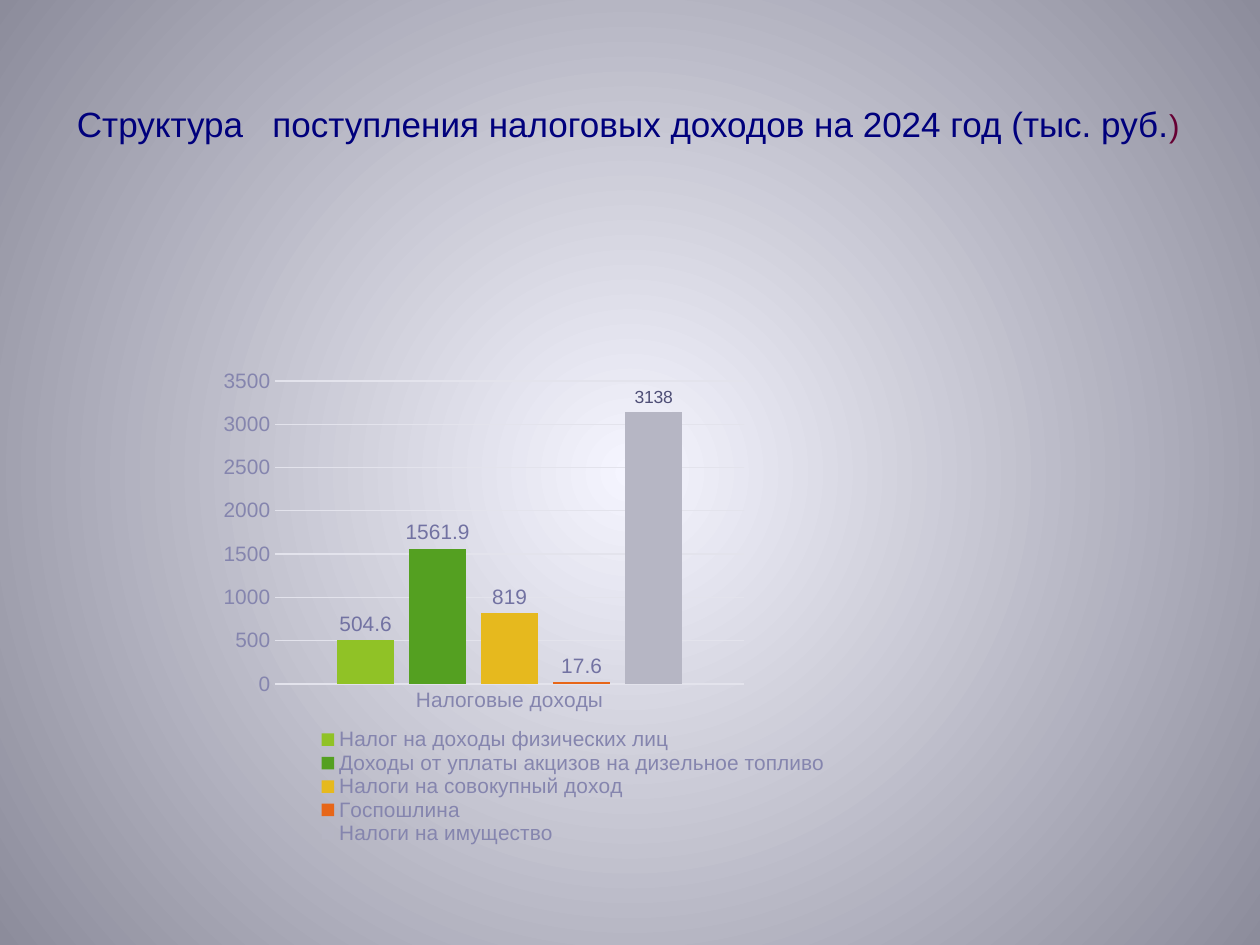
from lxml.etree import SubElement
from pptx import Presentation
from pptx.chart.data import CategoryChartData
from pptx.dml.color import RGBColor
from pptx.enum.chart import (
    XL_CHART_TYPE as ChartType,
    XL_LABEL_POSITION as LabelPosition,
    XL_LEGEND_POSITION as LegendPosition,
    XL_TICK_MARK as TickMark,
)
from pptx.enum.text import MSO_ANCHOR as Anchor, PP_ALIGN as Align
from pptx.oxml.ns import qn
from pptx.util import Cm, Pt

FONT = "Arial"
COLORS = {
    "center": "F5F5FF",
    "edge": "8C8C9B",
    "title": "00007C",
    "bracket": "660033",
    "axis_text": "8585AE",
    "label": "7272A2",
    "dark_label": "4F4F77",
    "grid": "E3E3EC",
}
CATEGORY = "Налоговые доходы"
# name, value, bar colour, label size, label colour
TAXES = [
    ("Налог на доходы физических лиц", 504.6, "90C226", 11.9, "label"),
    ("Доходы от уплаты акцизов на дизельное топливо", 1561.9, "54A021", 11.9, "label"),
    ("Налоги на совокупный доход", 819, "E6B91E", 11.9, "label"),
    ("Госпошлина", 17.6, "E76618", 11.9, "label"),
    ("Налоги на имущество", 3138, "B6B6C4", 10, "dark_label"),
]


class SlideBuilder:
    def __init__(self, presentation):
        self.slide = presentation.slides.add_slide(presentation.slide_layouts[5])

    def style_font(self, font, size, color):
        font.name = FONT
        font.size = Pt(size)
        font.color.rgb = RGBColor.from_string(COLORS[color])

    def style_line(self, line):
        line.color.rgb = RGBColor.from_string(COLORS["grid"])
        line.width = Pt(0.75)

    def radial_background(self):
        fill = self.slide.background.fill
        fill.gradient()
        for stop, name in zip(fill.gradient_stops, ("center", "edge")):
            stop.color.rgb = RGBColor.from_string(COLORS[name])
        gradient = self.slide.element.find(".//" + qn("a:gradFill"))
        gradient.remove(gradient.find(qn("a:lin")))
        circle = SubElement(gradient, qn("a:path"), {"path": "circle"})
        SubElement(circle, qn("a:fillToRect"), dict.fromkeys("ltrb", "50000"))

    def title(self, parts, left, top, width, height):
        shape = self.slide.shapes.title
        shape.left, shape.top, shape.width, shape.height = left, top, width, height
        text_frame = shape.text_frame
        text_frame.vertical_anchor = Anchor.MIDDLE
        paragraph = text_frame.paragraphs[0]
        paragraph.alignment = Align.CENTER
        for text, size, color in parts:
            run = paragraph.add_run()
            run.text = text
            self.style_font(run.font, size, color)

    def set_layout(self, parent, index, inner, **place):
        """Place a chart part by fractions of the chart area."""
        for old in parent.findall(qn("c:layout")):
            parent.remove(old)
        layout = SubElement(parent, qn("c:layout"))
        parent.insert(index, layout)
        manual = SubElement(layout, qn("c:manualLayout"))
        if inner:
            SubElement(manual, qn("c:layoutTarget"), val="inner")
        for mode in ("xMode", "yMode"):
            SubElement(manual, qn("c:" + mode), val="edge")
        for name, value in place.items():
            SubElement(manual, qn("c:" + name), val=str(value))

    def column_chart(self, left, top, width, height):
        data = CategoryChartData()
        data.categories = [CATEGORY]
        for name, value, *_ in TAXES:
            data.add_series(name, [value])
        chart = self.slide.shapes.add_chart(
            ChartType.COLUMN_CLUSTERED, left, top, width, height, data
        ).chart
        chart.has_title = False
        self.style_font(chart.font, 10, "dark_label")

        # Axes
        for axis in (chart.category_axis, chart.value_axis):
            axis.major_tick_mark = axis.minor_tick_mark = TickMark.NONE
            self.style_font(axis.tick_labels.font, 11.9, "axis_text")
        self.style_line(chart.category_axis.format.line)
        value_axis = chart.value_axis
        value_axis.minimum_scale, value_axis.maximum_scale = 0, 3500
        value_axis.major_unit = 500
        value_axis.format.line.fill.background()
        self.style_line(value_axis.major_gridlines.format.line)

        # Columns and their labels
        plot = chart.plots[0]
        plot.gap_width, plot.overlap, plot.vary_by_categories = 219, -27, False
        for series, (_, _, fill, size, color) in zip(plot.series, TAXES):
            series.format.fill.solid()
            series.format.fill.fore_color.rgb = RGBColor.from_string(fill)
            labels = series.data_labels
            labels.show_value = True
            labels.position = LabelPosition.OUTSIDE_END
            self.style_font(labels.font, size, color)

        # Legend under the plot
        chart.has_legend = True
        chart.legend.position = LegendPosition.RIGHT
        chart.legend.include_in_layout = False
        self.style_font(chart.legend.font, 11.9, "axis_text")
        root = chart.element
        self.set_layout(root.find(".//" + qn("c:plotArea")), 0, True,
                        x=0.086, y=0.037, w=0.557, h=0.628)
        self.set_layout(root.find(".//" + qn("c:legend")), 1, False,
                        x=0.13, y=0.755, w=0.62, h=0.245)


def main():
    presentation = Presentation()
    presentation.slide_width, presentation.slide_height = Cm(25.4), Cm(19.05)
    builder = SlideBuilder(presentation)
    builder.radial_background()
    builder.title(
        [
            ("Структура   поступления налоговых доходов на 2024 год (тыс. руб.", 20, "title"),
            (")", 18, "bracket"),
        ],
        Cm(0.84), Cm(0.64), Cm(23.65), Cm(3.68),
    )
    builder.column_chart(Cm(4.09), Cm(7.32), Cm(16.97), Cm(9.73))
    presentation.save("out.pptx")


if __name__ == "__main__":
    main()
